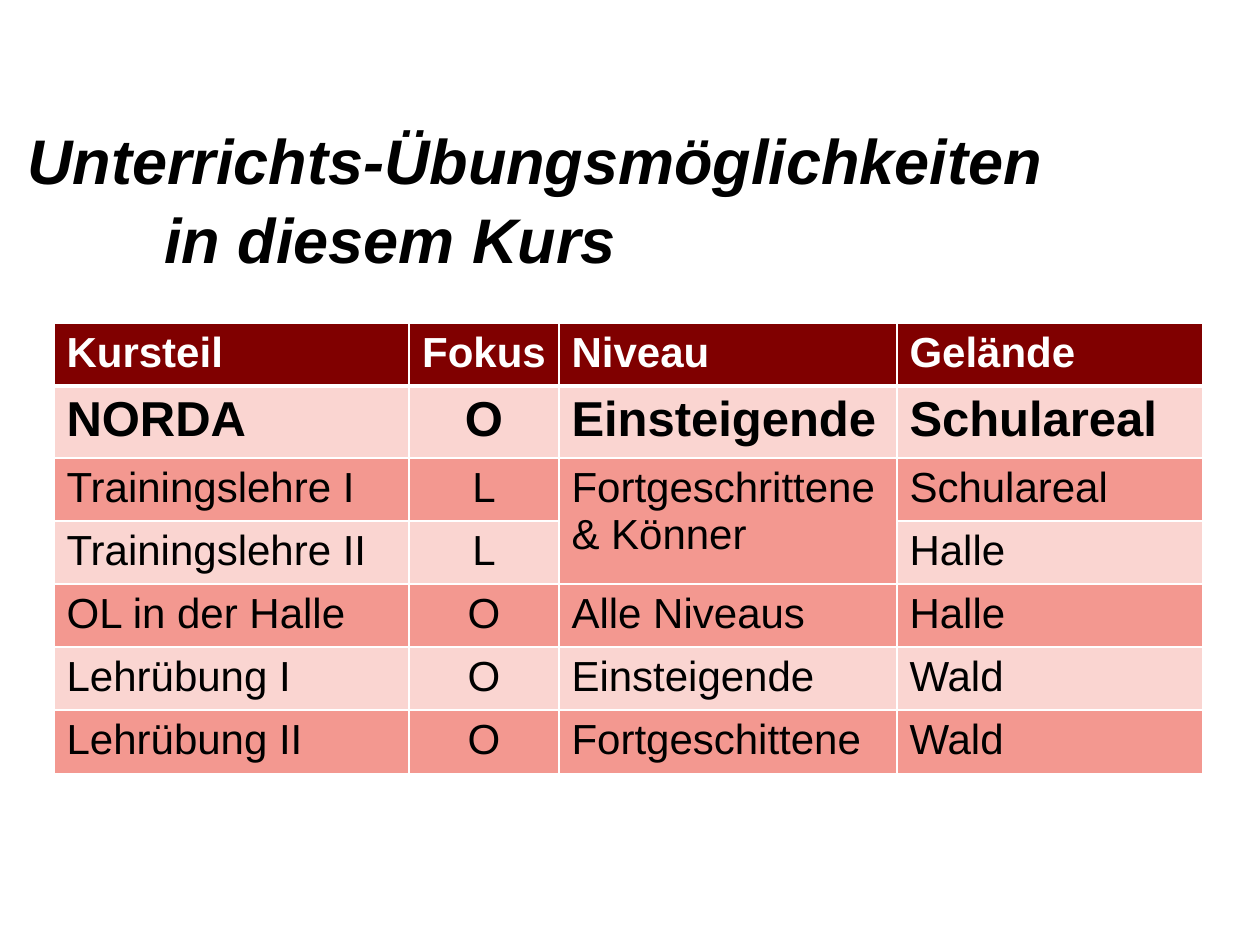
from pptx import Presentation
from pptx.dml.color import RGBColor
from pptx.enum.text import MSO_ANCHOR, PP_ALIGN
from pptx.oxml.ns import qn
from pptx.util import Pt
from lxml import etree

MIDDLE = MSO_ANCHOR.MIDDLE
LEFT, CENTER = PP_ALIGN.LEFT, PP_ALIGN.CENTER

BLACK = RGBColor(0x00, 0x00, 0x00)
WHITE = RGBColor(0xFF, 0xFF, 0xFF)
MAROON = RGBColor(0x80, 0x00, 0x00)
PALE = RGBColor(0xFA, 0xD5, 0xD1)
SALMON = RGBColor(0xF3, 0x98, 0x90)
FONT = "Arial"

# Content
TITLE = "Unterrichts-Übungsmöglichkeiten\v\tin diesem Kurs"
COURSES = [
    ("Kursteil", "Fokus", "Niveau", "Gelände"),
    ("NORDA", "O", "Einsteigende", "Schulareal"),
    ("Trainingslehre I", "L", "Fortgeschrittene & Könner", "Schulareal"),
    ("Trainingslehre II", "L", "", "Halle"),
    ("OL in der Halle", "O", "Alle Niveaus", "Halle"),
    ("Lehrübung I", "O", "Einsteigende", "Wald"),
    ("Lehrübung II", "O", "Fortgeschittene", "Wald"),
]

# Layout in px
TITLE_BOX = (15, 115, 1261, 165)
TITLE_INDENT = 74
TITLE_TAB = 830
TABLE_LEFT, TABLE_TOP = 54, 323
COLUMN_WIDTHS = (355, 150, 338, 306)
ROW_HEIGHTS = (63, 72, 63, 63, 63, 63, 63)
FOCUS_COLUMN, LEVEL_COLUMN = 1, 2


def px(length):
    return round(length * 914400 / 126)


def style(font, size, color, bold, italic=False):
    font.name, font.size = FONT, Pt(size)
    font.color.rgb = color
    font.bold, font.italic = bold, italic


def add_borders(cell, widths):
    properties = cell._tc.get_or_add_tcPr()
    for position, (side, width) in enumerate(widths.items()):
        line = etree.Element(qn(f"a:{side}"), w=str(Pt(width)))
        fill = etree.SubElement(line, qn("a:solidFill"))
        etree.SubElement(fill, qn("a:srgbClr"), val=str(WHITE))
        properties.insert(position, line)


def add_title(slide):
    frame = slide.shapes.add_textbox(*map(px, TITLE_BOX)).text_frame
    frame.word_wrap = True
    frame.vertical_anchor = MIDDLE
    frame.text = TITLE
    paragraph = frame.paragraphs[0]
    paragraph.line_spacing = 1.04
    # Hanging indent and the tab stop of the second line
    properties = paragraph._p.get_or_add_pPr()
    properties.set("marL", str(px(TITLE_INDENT)))
    properties.set("indent", str(-px(TITLE_INDENT)))
    tabs = etree.SubElement(properties, qn("a:tabLst"))
    etree.SubElement(tabs, qn("a:tab"), pos=str(px(TITLE_TAB)), algn="l")
    for run in paragraph.runs:
        style(run.font, 36, BLACK, True, True)


def add_courses(slide):
    table = slide.shapes.add_table(
        len(COURSES), len(COLUMN_WIDTHS), px(TABLE_LEFT), px(TABLE_TOP),
        px(sum(COLUMN_WIDTHS)), px(sum(ROW_HEIGHTS))).table
    for column, width in zip(table.columns, COLUMN_WIDTHS):
        column.width = px(width)
    for row, height in zip(table.rows, ROW_HEIGHTS):
        row.height = px(height)

    for r, course in enumerate(COURSES):
        header, highlighted = r == 0, r == 1
        for c, text in enumerate(course):
            cell = table.cell(r, c)
            cell.text = text
            cell.fill.solid()
            cell.fill.fore_color.rgb = MAROON if header else PALE if r % 2 else SALMON
            add_borders(cell, {"lnL": 1, "lnR": 1, "lnT": 3 if highlighted else 1,
                               "lnB": 3 if header else 1})
            paragraph = cell.text_frame.paragraphs[0]
            paragraph.alignment = CENTER if c == FOCUS_COLUMN else LEFT
            style(paragraph.font, 28 if highlighted else 24,
                  WHITE if header else BLACK, header or highlighted)
            for run in paragraph.runs:
                style(run.font, 28 if highlighted else 24,
                      WHITE if header else BLACK, header or highlighted)

    # Both training parts share one level
    table.cell(2, LEVEL_COLUMN).merge(table.cell(3, LEVEL_COLUMN))


def main():
    presentation = Presentation()
    presentation.slide_width, presentation.slide_height = px(1260), px(945)
    slide = presentation.slides.add_slide(presentation.slide_layouts[6])
    add_title(slide)
    add_courses(slide)
    presentation.save("out.pptx")


if __name__ == "__main__":
    main()
